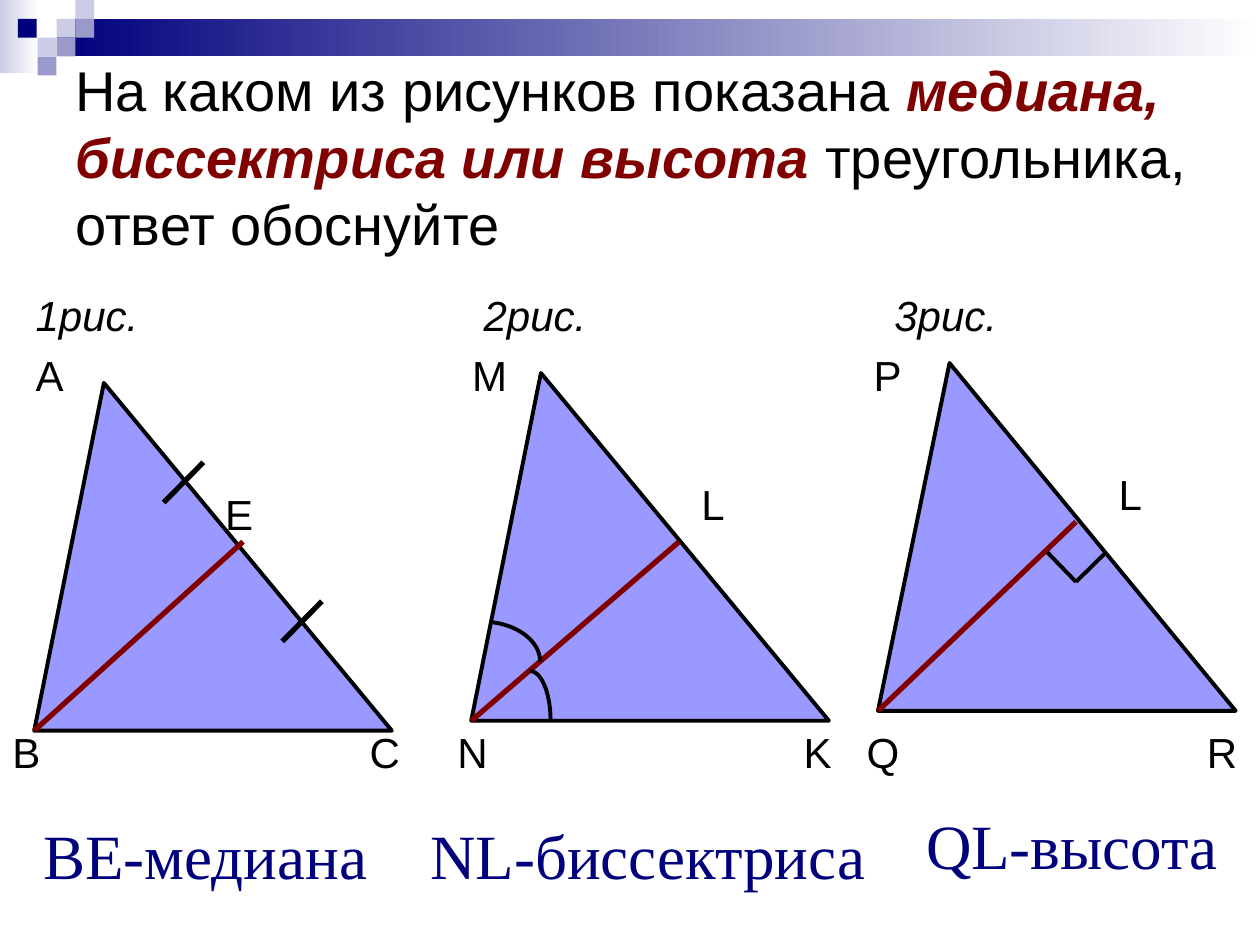
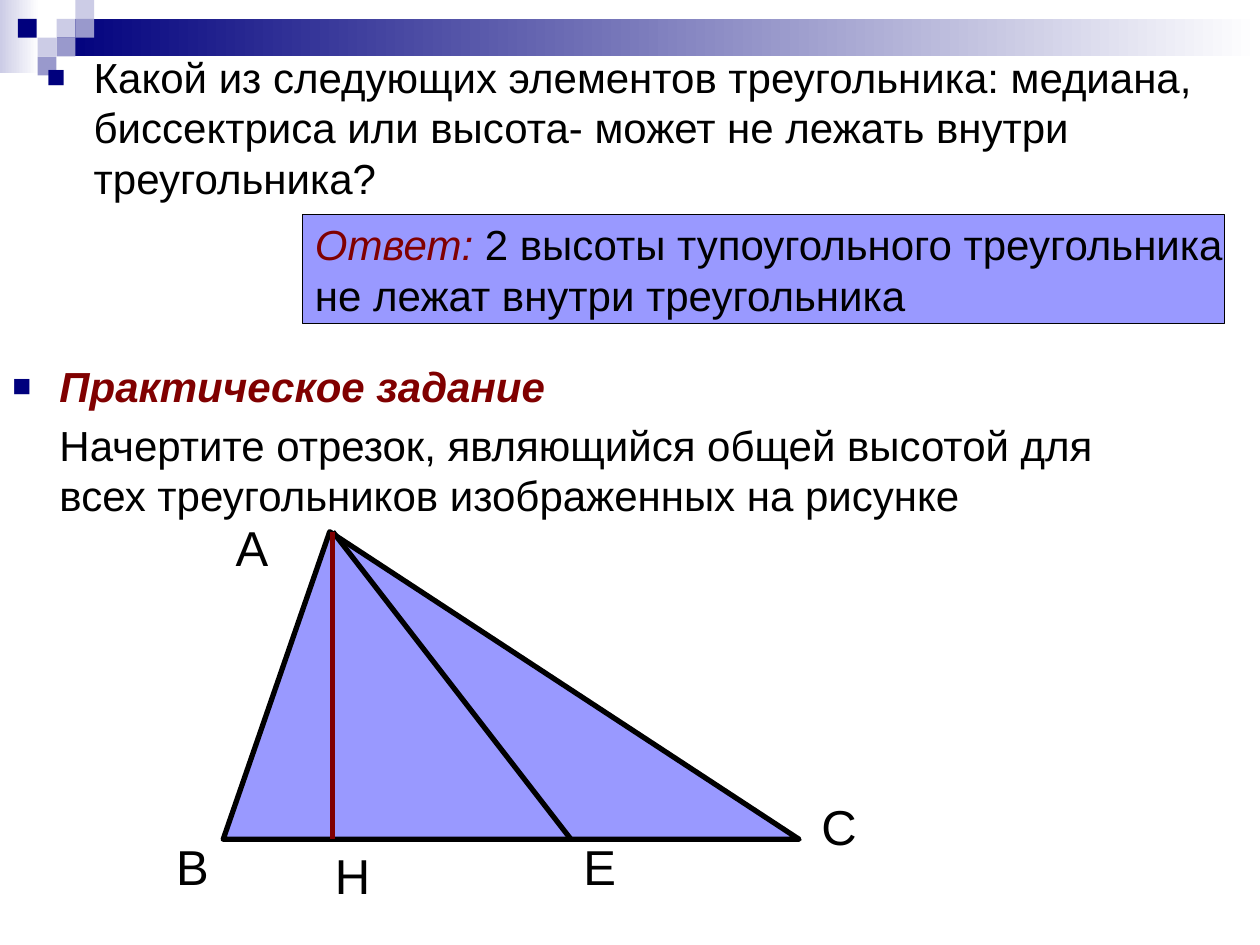
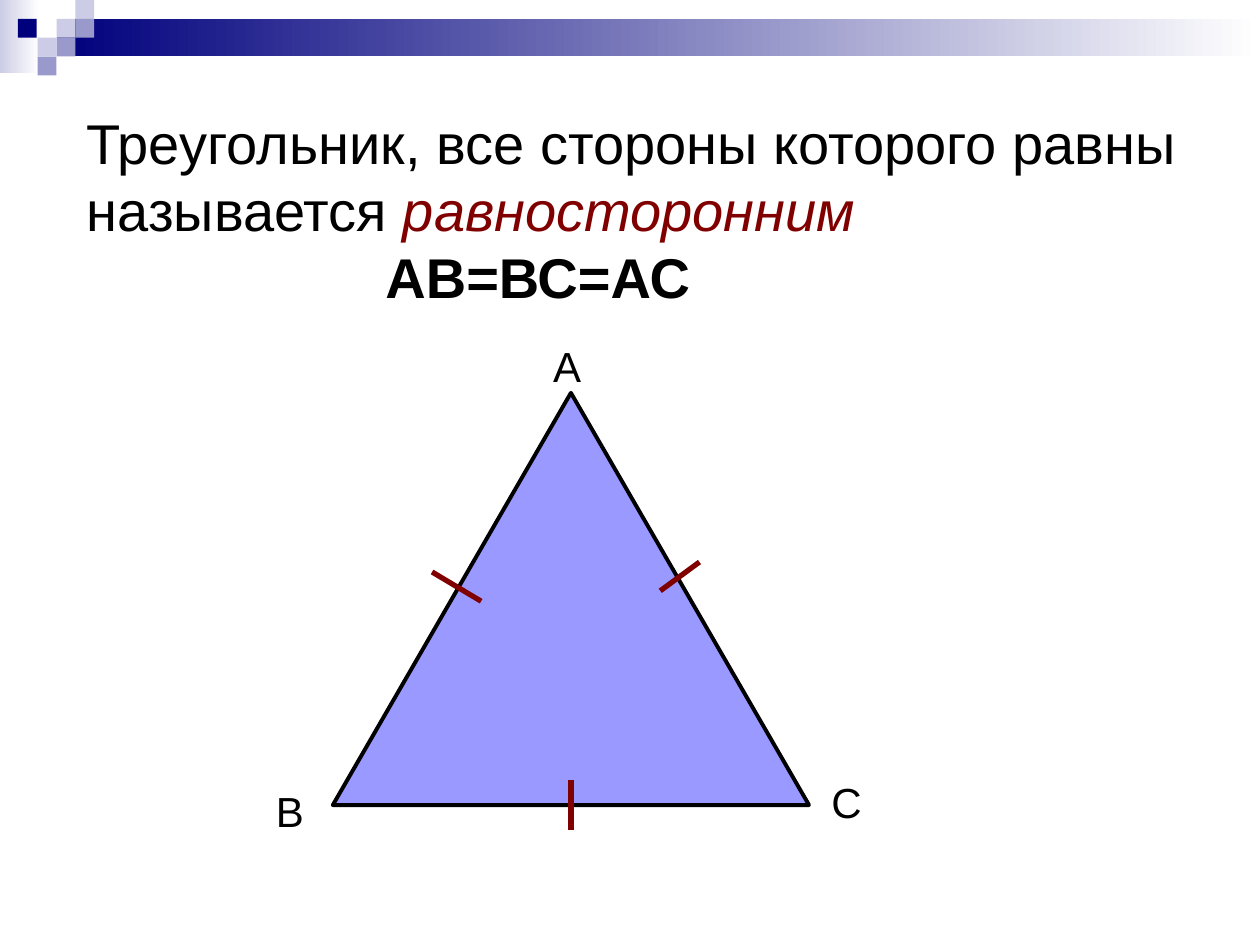
from math import cos, radians, sin

from lxml import etree
from pptx import Presentation
from pptx.dml.color import RGBColor
from pptx.enum.shapes import MSO_CONNECTOR, MSO_SHAPE
from pptx.enum.text import MSO_ANCHOR, PP_ALIGN
from pptx.oxml.ns import qn
from pptx.util import Cm, Pt

RECTANGLE = MSO_SHAPE.RECTANGLE
TRIANGLE = MSO_SHAPE.ISOSCELES_TRIANGLE
STRAIGHT = MSO_CONNECTOR.STRAIGHT
TOP, MIDDLE = MSO_ANCHOR.TOP, MSO_ANCHOR.MIDDLE
LEFT, CENTER = PP_ALIGN.LEFT, PP_ALIGN.CENTER

BLACK = RGBColor(0x00, 0x00, 0x00)
WHITE = RGBColor(0xFF, 0xFF, 0xFF)
MAROON = RGBColor(0x80, 0x00, 0x00)
NAVY = RGBColor(0x00, 0x00, 0x7D)
VIOLET = RGBColor(0x99, 0x99, 0xFF)
LAVENDER = RGBColor(0xCC, 0xCC, 0xE6)
LILAC = RGBColor(0x99, 0x99, 0xCC)

SANS, SERIF = "Arial", "Times New Roman"
SQUARE = 0.38
HANGING = 0.95
STRONG = {"color": MAROON, "bold": True, "italic": True}
ACCENT = {"color": MAROON, "italic": True}


def lengths(values):
    """Turn numbers in centimetres into lengths."""
    return [Cm(value) for value in values]


def write(frame, paragraphs, size=24, color=BLACK, font=SANS, italic=None,
          align=LEFT, anchor=TOP, wrap=True, inset=0.25):
    """Fill a text frame; a paragraph is a string or a list of (text, style) spans."""
    frame.word_wrap = wrap
    frame.vertical_anchor = anchor
    frame.margin_left = frame.margin_right = Cm(inset)
    for index, spans in enumerate(paragraphs):
        para = frame.add_paragraph() if index else frame.paragraphs[0]
        para.alignment = align
        for text, style in [(spans, {})] if isinstance(spans, str) else spans:
            span = para.add_run()
            span.text = text
            span.font.name = font
            span.font.size = Pt(size)
            span.font.color.rgb = style.get("color", color)
            span.font.bold = style.get("bold")
            span.font.italic = style.get("italic", italic)


def add_text(page, at, *paragraphs, **style):
    """Add a text box and return its paragraphs."""
    box = page.shapes.add_textbox(*lengths(at))
    write(box.text_frame, paragraphs, **style)
    return box.text_frame.paragraphs


def add_label(page, letter, left, top, width=0.99, size=24):
    """Name a point with one letter."""
    add_text(page, (left, top, width, 1.27), letter, size=size)


def add_label_row(page, top, labels, italic=None):
    """Set (text, position) labels in one line across the page with tab stops."""
    first = labels[0][1]
    text = "\t".join(name for name, stop in labels)
    para, = add_text(page, (0, top, 25.4, 1.27), "\t" + text if first else text, italic=italic)
    tabs = etree.SubElement(para._p.get_or_add_pPr(), qn("a:tabLst"))
    for name, stop in labels:
        if stop:
            etree.SubElement(tabs, qn("a:tab"), pos=str(Cm(stop)), algn="l")


def indent(para, left, first=0):
    """Set the left margin and the first line indent of a paragraph."""
    properties = para._p.get_or_add_pPr()
    properties.set("marL", str(Cm(left)))
    properties.set("indent", str(Cm(first)))
    return properties


def add_bullet(para):
    """Give a paragraph a small navy square bullet."""
    properties = indent(para, HANGING, -HANGING)
    color = etree.SubElement(properties, qn("a:buClr"))
    etree.SubElement(color, qn("a:srgbClr"), val=str(NAVY))
    etree.SubElement(properties, qn("a:buSzPct"), val="75000")
    etree.SubElement(properties, qn("a:buFont"), typeface=SANS)
    etree.SubElement(properties, qn("a:buChar"), char="■")


def add_figure(page, kind, at, fill, line_width=0):
    """Add a filled preset shape with an optional black outline."""
    figure = page.shapes.add_shape(kind, *lengths(at))
    figure.shadow.inherit = False
    figure.fill.solid()
    figure.fill.fore_color.rgb = fill
    if line_width:
        figure.line.color.rgb = BLACK
        figure.line.width = Pt(line_width)
    else:
        figure.line.fill.background()
    return figure


def add_triangle(page, at, apex, line_width=2.25):
    """Add a triangle whose apex lies at a share of its width."""
    add_figure(page, TRIANGLE, at, VIOLET, line_width).adjustments[0] = apex


def add_line(page, *ends, color=MAROON, width=3):
    """Draw a segment from x1, y1 to x2, y2."""
    line = page.shapes.add_connector(STRAIGHT, *lengths(ends))
    line.line.color.rgb = color
    line.line.width = Pt(width)
    etree.SubElement(line.element.spPr, qn("a:effectLst"))


def add_angle_arc(page, center_x, center_y, radius_x, radius_y, start=90, steps=24):
    """Draw an elliptic arc from the start angle down to zero degrees."""
    angles = [radians(start * (1 - step / steps)) for step in range(steps + 1)]
    points = [(Cm(center_x + radius_x * cos(angle)), Cm(center_y - radius_y * sin(angle)))
              for angle in angles]
    builder = page.shapes.build_freeform(*points[0])
    builder.add_line_segments(points[1:], close=False)
    arc = builder.convert_to_shape()
    arc.shadow.inherit = False
    arc.fill.background()
    arc.line.color.rgb = BLACK
    arc.line.width = Pt(2.25)


def add_gradient(page, at, color):
    """Add a bar that fades from a colour to white."""
    bar = add_figure(page, RECTANGLE, at, color)
    bar.fill.gradient()
    bar.fill.gradient_angle = 0
    for stop, shade in zip(bar.fill.gradient_stops, (color, WHITE)):
        stop.color.rgb = shade
    return bar


def decorate_layout(layout, page):
    """Build the top band on a page and move it to the layout shared by all."""
    for holder in list(layout.placeholders):
        layout.shapes.element.remove(holder.element)
    parts = [add_gradient(page, (0, 0, 0.79, 1.47), LAVENDER),
             add_gradient(page, (3 * SQUARE, SQUARE, 24.26, 2 * SQUARE), NAVY)]
    for column, row, color in ((3, 1, LAVENDER), (4, 0, LAVENDER), (4, 1, LILAC),
                               (2, 2, LAVENDER), (0.95, 1, NAVY), (3, 2, LILAC),
                               (2, 3, LILAC)):
        at = (column * SQUARE, row * SQUARE, SQUARE, SQUARE)
        parts.append(add_figure(page, RECTANGLE, at, color))
    for part in parts:
        layout.shapes.element.append(part.element)


def build_question(page):
    """Three triangles with a median, a bisector and an altitude."""
    add_text(page, (1.27, 0.76, 24.13, 4.78),
             [("На каком из рисунков показана ", {}),
              ("медиана, биссектриса или высота ", STRONG),
              ("треугольника, ответ обоснуйте", {})], size=32, anchor=MIDDLE)
    for left, top, apex in ((0.69, 7.72, 0.195), (9.5, 7.52, 0.195), (17.7, 7.32, 0.2)):
        add_triangle(page, (left, top, 7.21, 7.01), apex)
    add_label_row(page, 5.72, [("1рис.", 0.47), ("2рис.", 9.5), ("3рис.", 17.78)], italic=True)
    add_label_row(page, 6.93, [("А", 0.47), ("М", 9.27), ("Р", 17.36)])
    add_label_row(page, 14.53, [("В", 0), ("С", 7.2), ("N", 8.97),
                                ("K", 15.95), ("Q", 17.22), ("R", 24.08)])
    for ends in ((0.69, 14.73, 4.9, 10.92), (9.5, 14.53, 13.69, 10.92),
                 (17.7, 14.33, 21.69, 10.52)):
        add_line(page, *ends)
    for left, top in ((3.3, 9.32), (5.69, 12.12)):
        add_line(page, left + 0.8, top, left, top + 0.81, color=BLACK)
    add_angle_arc(page, 10.69, 14.53, 0.41, 1)
    add_angle_arc(page, 9.7, 13.34, 1.19, 0.81, start=82)
    for side in (21.11, 22.3):
        add_line(page, side, 11.13, 21.69, 11.73, color=BLACK, width=2.25)
    for letter, left, top in (("E", 4.29, 9.73), ("L", 13.89, 9.53), ("L", 22.3, 9.32)):
        add_label(page, letter, left, top)
    for answer, left, top, width in (("BE-медиана", 0.79, 16.33, 6.7),
                                     ("NL-биссектриса", 8.61, 16.33, 8.91),
                                     ("QL-высота", 18.59, 16.13, 6.04)):
        add_text(page, (left, top, width, 1.45), answer, size=36, color=NAVY,
                 font=SERIF, align=CENTER, wrap=False, inset=0)


def build_practice(page):
    """A question with its answer, and a task about a common altitude."""
    question, = add_text(page, (0.69, 0.91, 24.21, 3.99),
                         "Какой из следующих элементов треугольника: медиана, "
                         "биссектриса или высота- может не лежать внутри треугольника?")
    add_bullet(question)
    add_triangle(page, (4.5, 10.72, 11.61, 6.2), 0.185, 3)
    add_line(page, 6.71, 10.72, 11.51, 16.92, color=BLACK)
    add_line(page, 6.71, 10.72, 6.71, 16.92)
    for letter, left, top in (("А", 4.5, 10.31), ("В", 3.3, 16.74), ("С", 16.31, 15.93),
                              ("Е", 11.51, 16.74), ("Н", 6.5, 16.92)):
        add_label(page, letter, left, top, 1.4, 28)
    heading, task = add_text(page, (0, 7.14, 22.86, 4.6),
                             [("Практическое задание", STRONG)],
                             "Начертите отрезок, являющийся общей высотой для "
                             "всех треугольников изображенных на рисунке")
    add_bullet(heading)
    indent(task, HANGING)
    task.space_before = Pt(4.8)
    answer = add_figure(page, RECTANGLE, (6.1, 4.32, 18.59, 2.21), VIOLET, 0.75)
    write(answer.text_frame,
          [[("Ответ:", ACCENT), (" 2 высоты тупоугольного треугольника", {})],
           "не лежат внутри треугольника"], anchor=MIDDLE, wrap=False)


def build_equilateral(page):
    """The definition of an equilateral triangle."""
    definition, equality = add_text(
        page, (1.5, 2.31, 22.86, 3.81),
        [("Треугольник, все стороны которого равны называется ", {}),
         ("равносторонним", ACCENT)],
        [("АВ=ВС=АС", {"bold": True})], size=32, anchor=MIDDLE)
    indent(equality, 6.02)
    add_triangle(page, (6.71, 7.92, 9.6, 8.31), 0.5)
    for ends in ((8.71, 11.53, 9.7, 12.12), (14.1, 11.33, 13.31, 11.91),
                 (11.51, 15.72, 11.51, 16.74)):
        add_line(page, *ends)
    for letter, left, top in (("А", 10.9, 6.73), ("В", 5.31, 15.72), ("С", 16.51, 15.52)):
        add_label(page, letter, left, top, 0.79)


def main():
    """Build the deck and save it."""
    deck = Presentation()
    deck.slide_width, deck.slide_height = Cm(25.4), Cm(19.05)
    layout = deck.slide_layouts[6]
    builders = (build_question, build_practice, build_equilateral)
    pages = [deck.slides.add_slide(layout) for builder in builders]
    decorate_layout(layout, pages[0])
    for builder, page in zip(builders, pages):
        builder(page)
    deck.save("out.pptx")


if __name__ == "__main__":
    main()
